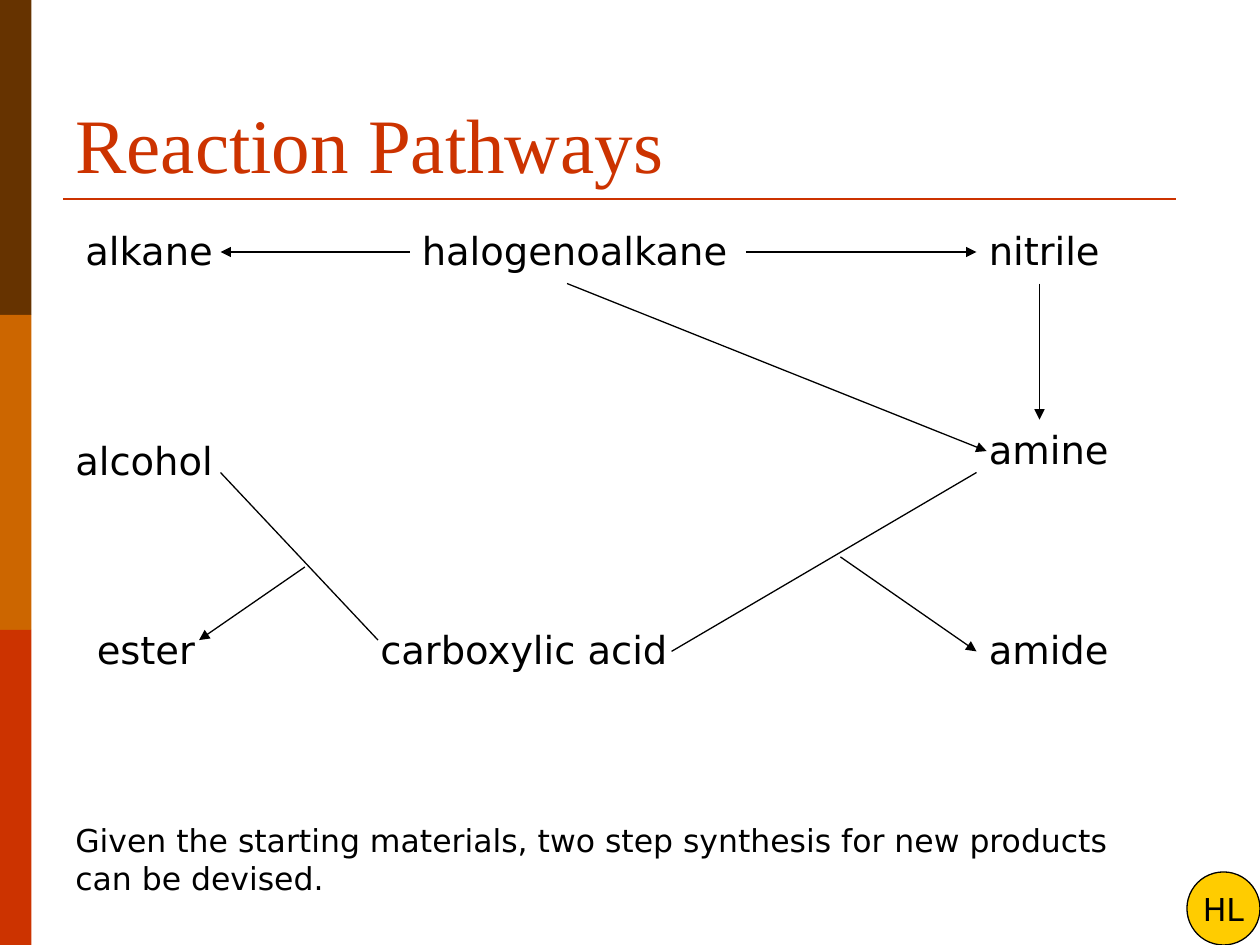
from lxml import etree
from pptx import Presentation
from pptx.dml.color import RGBColor
from pptx.enum import shapes, text
from pptx.oxml.ns import qn
from pptx.util import Inches, Pt

COLORS = {"brown": "663300", "orange": "CC6600", "red": "CC3300",
          "yellow": "FFCC00", "black": "000000"}
BODY_FONT, TITLE_FONT = "DejaVu Sans", "Times New Roman"

TITLE = "Reaction Pathways"
SUMMARY = ("Given the starting materials, two step synthesis "
           "for new products can be devised.")
LEVEL = "HL"
SIDE_BANDS = ["brown", "orange", "red"]
# name, left, top, width
COMPOUNDS = [
    ("alkane", 0.58, 1.75, 2.42),
    ("alcohol", 0.5, 3.42, 2.42),
    ("ester", 0.67, 4.92, 1.08),
    ("halogenoalkane", 3.25, 1.75, 3.17),
    ("nitrile", 7.75, 1.75, 1.33),
    ("amine", 7.75, 3.33, 1.42),
    ("carboxylic acid", 2.92, 4.92, 2.75),
    ("amide", 7.75, 4.92, 1.33),
]
# start, end
REACTIONS = [
    ((8.25, 2.25), (8.25, 3.33)),  # nitrile to amine
    ((4.5, 2.25), (7.83, 3.58)),   # halogenoalkane to amine
    ((3.25, 2), (1.75, 2)),        # halogenoalkane to alkane
    ((2.42, 4.5), (1.58, 5.08)),   # to ester
    ((6.67, 4.42), (7.75, 5.17)),  # to amide
    ((5.92, 2), (7.75, 2)),        # halogenoalkane to nitrile
]
REACTANT_PAIRS = [
    ((1.75, 3.75), (3, 5.08)),     # alcohol with carboxylic acid
    ((5.33, 5.17), (7.75, 3.75)),  # carboxylic acid with amine
]


def rgb(name):
    return RGBColor.from_string(COLORS[name])


def write(shape, words, size=22, font=BODY_FONT, color="black",
          align=text.PP_ALIGN.LEFT, anchor=text.MSO_ANCHOR.TOP, wrap=True):
    frame = shape.text_frame
    frame.word_wrap = wrap
    frame.vertical_anchor = anchor
    paragraph = frame.paragraphs[0]
    paragraph.alignment = align
    run = paragraph.add_run()
    run.text = words
    run.font.size = Pt(size)
    run.font.name = font
    run.font.color.rgb = rgb(color)


def add_label(slide, words, left, top, width, height=0.47, **format):
    label = slide.shapes.add_textbox(*map(Inches, (left, top, width, height)))
    write(label, words, **format)


def add_filled(slide, kind, box, fill):
    shape = slide.shapes.add_shape(kind, *map(Inches, box))
    shape.shadow.inherit = False
    shape.fill.solid()
    shape.fill.fore_color.rgb = rgb(fill)
    shape.line.fill.background()
    return shape


def add_line(slide, start, end, color="black", width=0.75, arrow=False):
    line = slide.shapes.add_connector(
        shapes.MSO_CONNECTOR.STRAIGHT, *map(Inches, (*start, *end)))
    line.line.color.rgb = rgb(color)
    line.line.width = Pt(width)
    if arrow:
        etree.SubElement(line.line._get_or_add_ln(), qn("a:tailEnd"), type="triangle")
    etree.SubElement(line._element.spPr, qn("a:effectLst"))


def main():
    deck = Presentation()
    deck.slide_width, deck.slide_height = Inches(10), Inches(7.5)
    slide = deck.slides.add_slide(deck.slide_layouts[5])

    band_height = 7.5 / len(SIDE_BANDS)
    for row, color in enumerate(SIDE_BANDS):
        add_filled(slide, shapes.MSO_SHAPE.RECTANGLE,
                   (0, row * band_height, 0.25, band_height), color)
    add_line(slide, (0.5, 1.58), (9.33, 1.58), color="red", width=1.5)

    title = slide.shapes.title
    title.left, title.top, title.width, title.height = map(Inches, (0.5, 0.3, 9, 1.25))
    write(title, TITLE, size=44, font=TITLE_FONT, color="red",
          anchor=text.MSO_ANCHOR.BOTTOM)

    for name, left, top, width in COMPOUNDS:
        add_label(slide, name, left, top, width)
    for start, end in REACTIONS:
        add_line(slide, start, end, arrow=True)
    for start, end in REACTANT_PAIRS:
        add_line(slide, start, end)

    badge = add_filled(slide, shapes.MSO_SHAPE.OVAL, (9.42, 6.92, 0.58, 0.58), "yellow")
    badge.line.color.rgb = rgb("black")
    badge.line.width = Pt(0.75)
    write(badge, LEVEL, size=18, align=text.PP_ALIGN.CENTER,
          anchor=text.MSO_ANCHOR.MIDDLE, wrap=False)
    add_label(slide, SUMMARY, 0.5, 6.47, 8.67, 0.7, size=18)

    deck.save("out.pptx")


if __name__ == "__main__":
    main()
